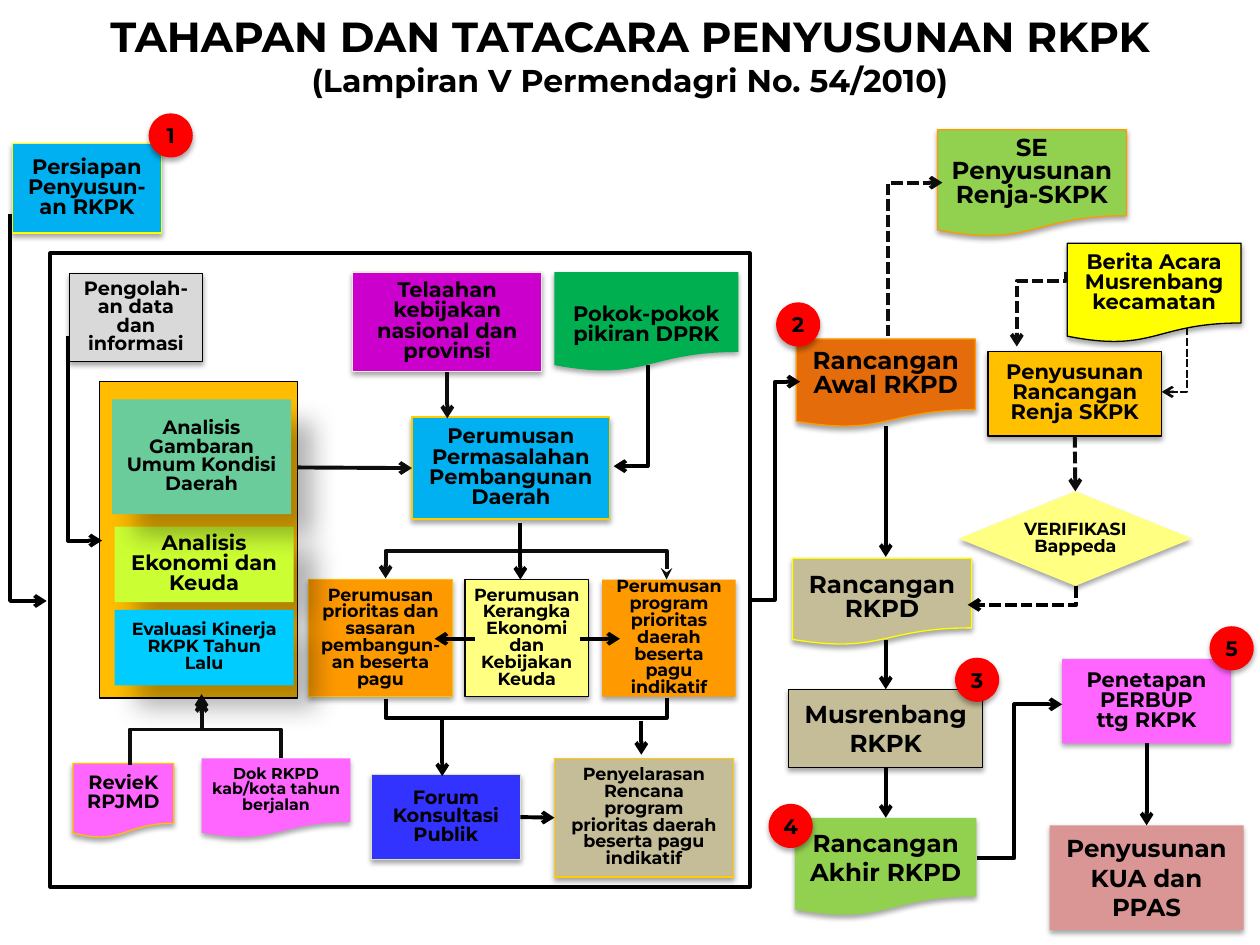
from lxml.etree import SubElement
from pptx import Presentation
from pptx.dml.color import RGBColor
from pptx.enum.dml import MSO_LINE
from pptx.enum.shapes import MSO_CONNECTOR as LINK, MSO_SHAPE as SHAPE
from pptx.enum.text import MSO_ANCHOR as ANCHOR, MSO_AUTO_SIZE, PP_ALIGN
from pptx.oxml.ns import qn
from pptx.util import Inches, Pt

FONT = "Montserrat"
RECT, DOC, DIAMOND = SHAPE.RECTANGLE, SHAPE.FLOWCHART_DOCUMENT, SHAPE.DIAMOND
TOP, LEFT, BOTTOM, RIGHT = range(4)
BLACK, INK = "000000", "0D0D0D"
# Shadow: opacity %, blur pt, distance pt, direction in degrees
NEAR, FAR = (35, 3.1, 1.8, 90), (30, 15, 18, 45)

TITLE = [("TAHAPAN DAN TATACARA PENYUSUNAN RKPK", 24),
         ("(Lampiran V Permendagri No. 54/2010)", 18)]

# Outlined areas: (left, top, width, height), fill, line width
AREAS = [((0.4, 2.01, 5.55, 5.03), None, 2.25),
         ((0.79, 3.03, 1.57, 2.51), "FFBC01", 0.75)]

# name: shape, (left, top, width, height), fill, line, font size, text, options
BOXES = {
    "awal": (DOC, (6.32, 2.69, 1.42, 0.7), "E46C0A", "FF9900", 14, "Rancangan Awal RKPD", {}),
    "musrenbang": (RECT, (6.26, 5.47, 1.54, 0.62), "C4BD97", BLACK, 14, "Musrenbang RKPK",
                   {"spacing": 1}),
    "akhir": (DOC, (6.31, 6.49, 1.44, 0.78), "92D050", None, 14, "Rancangan Akhir RKPD",
              {"spacing": 1}),
    "prioritas": (RECT, (2.45, 4.6, 1.14, 0.93), "FF9900", "FFC000", 10,
                  "Perumusan prioritas dan sasaran pembangun- an beserta pagu",
                  {"side": 0.08}),
    "forum": (RECT, (2.95, 6.15, 1.18, 0.67), "3333FF", "D7E4BD", 11,
              "Forum Konsultasi Publik", {}),
    "kerangka": (RECT, (3.69, 4.6, 0.98, 0.93), "FFFF81", "03070C", 10,
                 "Perumusan Kerangka Ekonomi dan Kebijakan Keuda", {"side": 0.05}),
    "data": (RECT, (0.55, 2.17, 1.06, 0.7), "D9D9D9", BLACK, 11,
             "Pengolah-an data dan informasi", {}),
    "ekonomi": (RECT, (0.91, 4.18, 1.42, 0.6), "CCFF33", None, 12,
                "Analisis Ekonomi dan Keuda", {"shadow": FAR}),
    "masalah": (RECT, (3.27, 3.31, 1.57, 0.81), "00B0F0", "FFCC00", 12,
                "Perumusan Permasalahan Pembangunan Daerah", {"side": 0}),
    "telaahan": (RECT, (2.8, 2.16, 1.5, 0.79), "CC00CC", "EBF1DE", 12,
                 "Telaahan kebijakan nasional dan\nprovinsi", {}),
    "edaran": (DOC, (7.44, 1.03, 1.5, 0.85), "92D050", "FF9900", 14,
               "SE Penyusunan Renja-SKPK", {}),
    "renja": (RECT, (7.84, 2.79, 1.38, 0.67), "FFC000", BLACK, 12,
              "Penyusunan Rancangan Renja SKPK", {}),
    "rkpd": (DOC, (6.29, 4.43, 1.42, 0.69), "C4BD97", "FFFF00", 14, "Rancangan RKPD",
             {"anchor": ANCHOR.BOTTOM}),
    "verifikasi": (DIAMOND, (7.61, 3.9, 1.85, 0.75), "FFFF81", None, 10,
                   "VERIFIKASI\nBappeda", {"side": 0}),
    "persiapan": (RECT, (0.1, 1.14, 1.18, 0.71), "00B0F0", "FFFF00", 12,
                  "Persiapan Penyusun-an RKPK", {}),
    "pokok": (DOC, (4.4, 2.16, 1.46, 0.79), "00B050", None, 12, "Pokok-pokok pikiran DPRK",
              {"anchor": ANCHOR.BOTTOM}),
    "berita": (DOC, (8.47, 1.93, 1.38, 0.79), "FFFF00", BLACK, 12,
               "Berita Acara\nMusrenbang kecamatan", {}),
    "gambaran": (RECT, (0.89, 3.17, 1.42, 0.91), "6ACC9B", None, 11,
                 "Analisis Gambaran Umum Kondisi Daerah", {"shadow": FAR}),
    "evaluasi": (RECT, (0.91, 4.84, 1.42, 0.6), "00CCFF", None, 10,
                 "Evaluasi Kinerja RKPK Tahun Lalu", {"shadow": FAR}),
    "review": (DOC, (0.58, 6.06, 0.8, 0.59), "FF66FF", "FFC000", 11, "RevieK\nRPJMD",
               {"side": 0}),
    "dokumen": (DOC, (1.6, 6.02, 1.18, 0.63), "FF66FF", None, 9,
                "Dok RKPD kab/kota tahun berjalan", {"side": 0}),
    "program": (RECT, (4.78, 4.6, 1.06, 0.93), "FF9900", None, 10,
                "Perumusan program prioritas daerah beserta pagu indikatif", {}),
    "selaras": (RECT, (4.4, 6.02, 1.42, 0.94), "C4BD97", "FFCC00", 10,
                "Penyelarasan Rencana program prioritas daerah beserta pagu indikatif", {}),
    "ppas": (RECT, (8.33, 6.55, 1.54, 0.83), "D99694", None, 14, "Penyusunan KUA dan PPAS",
             {"spacing": 1}),
    "perbup": (RECT, (8.43, 5.23, 1.34, 0.67), "FF66FF", None, 12,
               "Penetapan PERBUP\nttg RKPK", {}),
}

# Ends are points, or (box name, side)
STRAIGHT = [
    ((7.03, 3.38), (7.03, 4.42), {}),
    (("musrenbang", BOTTOM), ("akhir", TOP), {}),
    (("telaahan", BOTTOM), (3.55, 3.32), {"color": INK}),
    ((2.36, 3.71), ("masalah", LEFT), {"color": INK}),
    ((7.03, 5.08), ("musrenbang", TOP), {}),
    ((4.13, 4.15), (4.13, 4.6), {}),
    (("forum", RIGHT), ("selaras", LEFT), {}),
    ((5.09, 5.72), (5.09, 5.99), {}),
    ((3.51, 5.69), (3.51, 6.16), {}),
    (("renja", BOTTOM), ("verifikasi", TOP), {"color": INK, "dash": True}),
    ((3.77, 5.07), (3.45, 5.07), {}),
    ((4.6, 5.07), (4.92, 5.07), {}),
    (("perbup", BOTTOM), ("ppas", TOP), {}),
]
# from, to, first direction, place of the middle leg (None: a single bend), style
ELBOWS = [
    ((0.54, 2.67), (0.81, 4.29), "down", None, {}),
    ((5.14, 2.9), (4.87, 3.7), "down", None, {}),
    ((7.75, 6.81), (8.43, 5.59), "across", 8.05, {}),
    ((8.54, 4.65), (7.68, 4.8), "down", None, {"dash": True}),
    ((9.42, 2.6), (9.22, 3.11), "down", None, {"color": INK, "width": 1.5, "dash": True}),
    ((0.08, 1.7), (0.37, 4.77), "down", None, {}),
    ((5.95, 4.76), (6.35, 3.03), "across", 6.15, {}),
    ((7.05, 2.67), (7.48, 1.45), "down", None, {"color": INK, "dash": True}),
    ((8.46, 2.16), (8.07, 2.75), "down", 2.23, {"color": INK, "dash": True}),
    ((1.03, 6.07), (1.6, 5.51), "down", 5.79, {"color": INK}),
    ((2.23, 6.02), (1.6, 5.55), "down", 5.79, {"color": INK}),
    ((5.29, 4.6), (3.06, 4.59), "down", 4.37, {"color": INK, "head": "stealth"}),
    ((5.29, 5.54), (3.06, 5.55), "down", 5.7, {"tail": None}),
]
BADGES = [(1.18, 0.9), (6.16, 2.4), (7.58, 5.22), (6.1, 6.38), (9.6, 4.97)]
BADGE_SIZE = 0.35


def rgb(color):
    return RGBColor.from_string(color)


def write(frame, lines, spacing=None, anchor=ANCHOR.MIDDLE, side=0.1):
    """Fill a frame with centred bold lines of (text, size)."""
    frame.word_wrap = True
    frame.auto_size = MSO_AUTO_SIZE.NONE
    frame.vertical_anchor = anchor
    frame.margin_left = frame.margin_right = Inches(side)
    frame.margin_top = frame.margin_bottom = Inches(0.05)
    frame.text = "\n".join(text for text, _ in lines)
    for para, (_, size) in zip(frame.paragraphs, lines):
        para.alignment = PP_ALIGN.CENTER
        para.line_spacing = spacing
        para.font.name, para.font.size, para.font.bold = FONT, Pt(size), True
        para.font.color.rgb = rgb(BLACK)


def add_shadow(shape, opacity, blur, distance, angle):
    effects = shape._element.spPr.find(qn("a:effectLst"))
    outer = SubElement(effects, qn("a:outerShdw"), blurRad=str(Pt(blur)), dist=str(Pt(distance)),
                       dir=str(angle * 60000), algn="ctr", rotWithShape="0")
    color = SubElement(outer, qn("a:srgbClr"), val=BLACK)
    SubElement(color, qn("a:alpha"), val=str(opacity * 1000))


def add_box(slide, kind, area, fill=None, line=None, width=0.75, shadow=None):
    box = slide.shapes.add_shape(kind, *map(Inches, area))
    box.shadow.inherit = False
    for paint, color in ((box.fill, fill), (box.line.fill, line)):
        if color:
            paint.solid()
            paint.fore_color.rgb = rgb(color)
        else:
            paint.background()
    if line:
        box.line.width = Pt(width)
    if shadow:
        add_shadow(box, *shadow)
    return box


def style_link(link, color=BLACK, width=2.25, dash=False, head=None, tail="arrow"):
    link.line.color.rgb = rgb(color)
    link.line.width = Pt(width)
    if dash:
        link.line.dash_style = MSO_LINE.SQUARE_DOT
    outline = link.line._get_or_add_ln()
    for tag, arrow in (("a:headEnd", head), ("a:tailEnd", tail)):
        if arrow:
            SubElement(outline, qn(tag), type=arrow)
    SubElement(link._element.spPr, qn("a:effectLst"))


def add_straight(slide, boxes, start, end, style):
    points = [(0, 0) if isinstance(stop[0], str) else stop for stop in (start, end)]
    link = slide.shapes.add_connector(LINK.STRAIGHT, *map(Inches, points[0] + points[1]))
    for stop, join in ((start, link.begin_connect), (end, link.end_connect)):
        if isinstance(stop[0], str):
            join(boxes[stop[0]], stop[1])
    style_link(link, **style)


def add_elbow(slide, start, end, direction, middle, style):
    """Bend once, or twice with the middle leg at the given coordinate."""
    (x1, y1), (x2, y2) = start, end
    dx, dy = x2 - x1, y2 - y1
    across = direction == "across"
    # A connector that sets out vertically is a turned horizontal one
    if across:
        width, height, turn, flip_h = abs(dx), abs(dy), 0, dx < 0
    else:
        width, height, turn, flip_h = abs(dy), abs(dx), 90 if dx * dy < 0 else 270, dx > 0
    left, top = (x1 + x2 - width) / 2, (y1 + y2 - height) / 2
    link = slide.shapes.add_connector(
        LINK.ELBOW, *map(Inches, (left, top, left + width, top + height)))
    link_frame = link._element.spPr.find(qn("a:xfrm"))
    link_frame.set("rot", str(turn * 60000))
    link_frame.set("flipH", str(int(flip_h)))
    link_frame.set("flipV", str(int(dy < 0)))
    geometry = link._element.spPr.find(qn("a:prstGeom"))
    if middle is None:
        geometry.set("prst", "bentConnector2")
    else:
        share = (middle - x1) / dx if across else (middle - y1) / dy
        guides = geometry.find(qn("a:avLst"))
        SubElement(guides, qn("a:gd"), name="adj1", fmla=f"val {round(share * 100000)}")
    style_link(link, **style)


def main():
    deck = Presentation()
    deck.slide_width, deck.slide_height = Inches(10), Inches(7.5)
    slide = deck.slides.add_slide(deck.slide_layouts[5])
    title = slide.shapes.title
    title.left, title.top, title.width, title.height = map(Inches, (0, 0, 10, 0.87))
    write(title.text_frame, TITLE)

    for area, fill, width in AREAS:
        add_box(slide, RECT, area, fill, BLACK, width)
    boxes = {}
    for name, (kind, area, fill, line, size, text, options) in BOXES.items():
        layout = {"spacing": 0.8, **options}
        shadow = layout.pop("shadow", NEAR)
        boxes[name] = add_box(slide, kind, area, fill, line, shadow=shadow)
        write(boxes[name].text_frame, [(part, size) for part in text.split("\n")], **layout)
    for elbow in ELBOWS:
        add_elbow(slide, *elbow)
    for start, end, style in STRAIGHT:
        add_straight(slide, boxes, start, end, style)
    for number, corner in enumerate(BADGES, 1):
        badge = add_box(slide, SHAPE.OVAL, (*corner, BADGE_SIZE, BADGE_SIZE), "FF0000", shadow=NEAR)
        write(badge.text_frame, [(str(number), 12)], side=0.04)
    deck.save("out.pptx")


if __name__ == "__main__":
    main()
